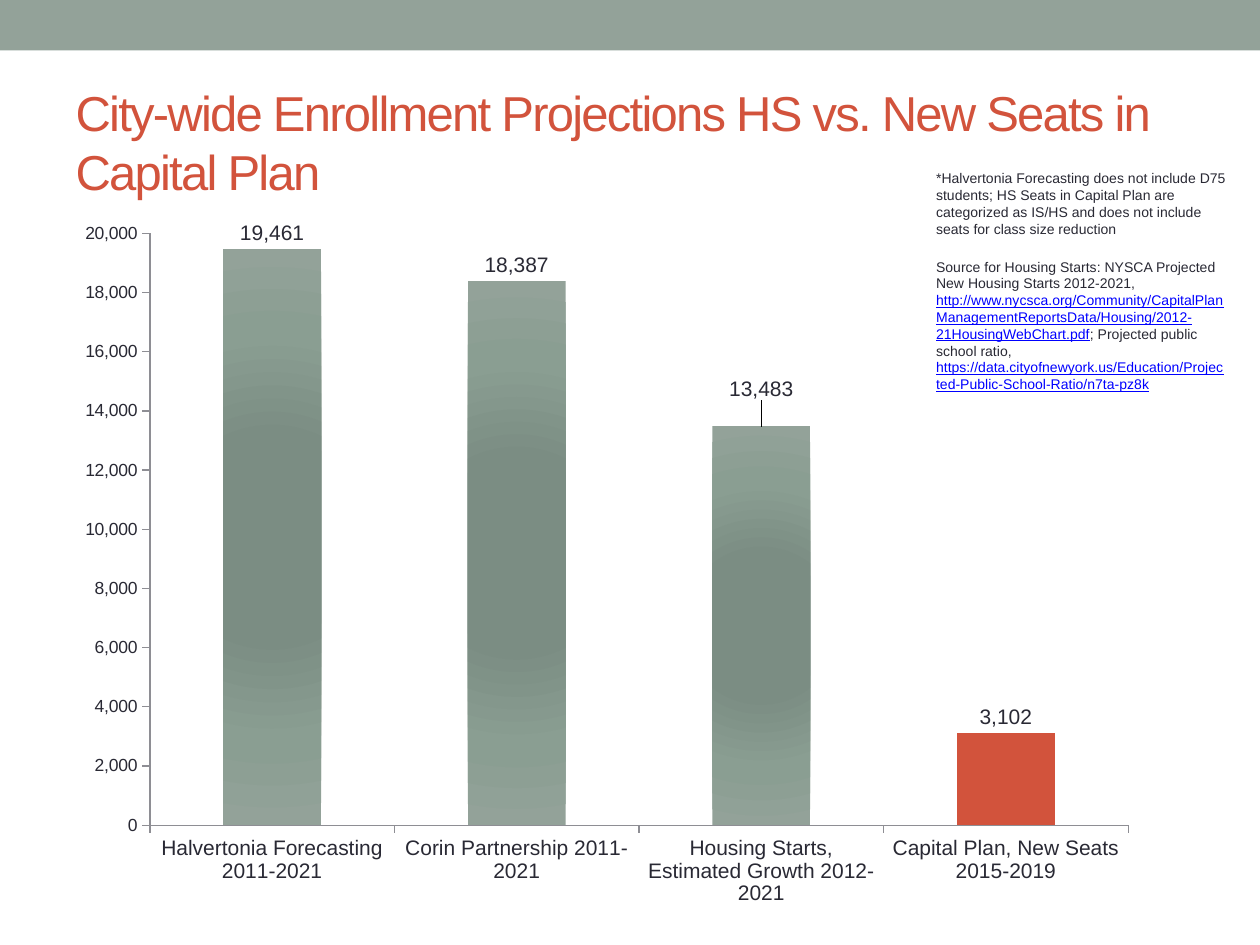
from dataclasses import dataclass

from lxml import etree
from pptx import Presentation
from pptx.chart.data import CategoryChartData
from pptx.dml.color import RGBColor
from pptx.enum.chart import XL_CHART_TYPE, XL_LABEL_POSITION, XL_TICK_MARK
from pptx.enum.shapes import MSO_SHAPE
from pptx.enum.text import MSO_ANCHOR, PP_ALIGN
from pptx.oxml import parse_xml
from pptx.oxml.ns import nsdecls, qn
from pptx.util import Pt

COLUMN = XL_CHART_TYPE.COLUMN_CLUSTERED
OUTSIDE_END = XL_LABEL_POSITION.OUTSIDE_END
TICK_OUT, TICK_NONE = XL_TICK_MARK.OUTSIDE, XL_TICK_MARK.NONE
RECTANGLE = MSO_SHAPE.RECTANGLE
MIDDLE, TOP = MSO_ANCHOR.MIDDLE, MSO_ANCHOR.TOP
LEFT = PP_ALIGN.LEFT
TITLE_ONLY = 5


@dataclass(frozen=True)
class Theme:
    font: str = "Arial"
    ink: str = "292934"
    sage: str = "93A299"
    accent: str = "D2533C"
    link: str = "0000FF"
    axis: str = "8E8E94"
    title_size: float = 28
    label_size: float = 12
    axis_size: float = 10
    note_size: float = 8
    gradient: tuple = ((0, "7B8E82"), (34, "7B8D83"), (70, "8A9E92"), (100, "93A299"))


@dataclass(frozen=True)
class Box:
    left: float
    top: float
    width: float
    height: float

    def lengths(self) -> tuple:
        return Pt(self.left), Pt(self.top), Pt(self.width), Pt(self.height)


@dataclass(frozen=True)
class Bar:
    category: str
    value: int
    highlighted: bool = False
    label_shift: float = 0


@dataclass(frozen=True)
class Piece:
    text: str
    is_link: bool = False


@dataclass(frozen=True)
class Note:
    box: Box
    pieces: tuple


THEME = Theme()
BAND = Box(0, 0, 720, 28.8)
TITLE = Box(36, 42, 648, 77.5)
CHART = Box(36, 120, 620.5, 406)
PLOT = {"x": 0.08, "y": 0.033, "w": 0.901, "h": 0.833}

BARS = (
    Bar("Halvertonia Forecasting 2011-2021", 19461),
    Bar("Corin Partnership 2011-2021", 18387),
    Bar("Housing Starts, Estimated Growth 2012-2021", 13483, label_shift=-0.03),
    Bar("Capital Plan, New Seats 2015-2019", 3102, highlighted=True),
)
NOTES = (
    Note(Box(527.8, 93.6, 180.7, 46), (
        Piece("*Halvertonia Forecasting does not include D75 students; HS Seats in Capital "
              "Plan are categorized as IS/HS and does not include seats for class size reduction"),
    )),
    Note(Box(527.8, 144, 180.7, 94.3), (
        Piece("Source for Housing Starts: NYSCA Projected New Housing Starts 2012-2021, "),
        Piece("http://www.nycsca.org/Community/CapitalPlanManagementReportsData/Housing/"
              "2012-21HousingWebChart.pdf", True),
        Piece("; Projected public school ratio, "),
        Piece("https://data.cityofnewyork.us/Education/Projected-Public-School-Ratio/n7ta-pz8k",
              True),
    )),
)


def style_font(font, size: float, color: str) -> None:
    font.name, font.size, font.bold = THEME.font, Pt(size), False
    font.color.rgb = RGBColor.from_string(color)


def add_band(slide) -> None:
    band = slide.shapes.add_shape(RECTANGLE, *BAND.lengths())
    band.shadow.inherit = False
    band.fill.solid()
    band.fill.fore_color.rgb = RGBColor.from_string(THEME.sage)
    band.line.fill.background()


def set_title(slide, text: str) -> None:
    title = slide.shapes.title
    title.left, title.top, title.width, title.height = TITLE.lengths()
    frame = title.text_frame
    frame.word_wrap, frame.vertical_anchor = True, MIDDLE
    paragraph = frame.paragraphs[0]
    paragraph.alignment = LEFT
    run = paragraph.add_run()
    run.text = text
    style_font(run.font, THEME.title_size, THEME.accent)
    run.font._element.set("spc", "-100")


def add_note(slide, note: Note) -> None:
    frame = slide.shapes.add_textbox(*note.box.lengths()).text_frame
    frame.word_wrap, frame.vertical_anchor = True, TOP
    paragraph = frame.paragraphs[0]
    for piece in note.pieces:
        run = paragraph.add_run()
        run.text = piece.text
        style_font(run.font, THEME.note_size, THEME.link if piece.is_link else THEME.ink)
        run.font.underline = piece.is_link


def manual_layout(values: dict, inner: bool = False):
    """Layout element with positions as fractions of the chart."""
    layout = parse_xml(f"<c:layout {nsdecls('c')}><c:manualLayout/></c:layout>")
    settings = dict(values)
    if inner:
        settings = {"layoutTarget": "inner", "xMode": "edge", "yMode": "edge", **settings}
    for name, value in settings.items():
        etree.SubElement(layout[0], qn(f"c:{name}")).set("val", str(value))
    return layout


def fill_radial(point) -> None:
    """Circular gradient, which needs XML."""
    stops = "".join(f'<a:gs pos="{position * 1000}"><a:srgbClr val="{color}"/></a:gs>'
                    for position, color in THEME.gradient)
    point.format.fill.solid()
    properties = point.format.fill._xPr
    properties.replace(properties.find(qn("a:solidFill")), parse_xml(
        f'<a:gradFill {nsdecls("a")} rotWithShape="1"><a:gsLst>{stops}</a:gsLst>'
        '<a:path path="circle"><a:fillToRect l="50000" t="50000" r="50000" b="50000"/></a:path>'
        "</a:gradFill>"))


def style_axis(axis, size: float) -> None:
    axis.has_major_gridlines = False
    axis.major_tick_mark, axis.minor_tick_mark = TICK_OUT, TICK_NONE
    axis.format.line.color.rgb = RGBColor.from_string(THEME.axis)
    axis.format.line.width = Pt(0.75)
    style_font(axis.tick_labels.font, size, THEME.ink)


def add_chart(slide) -> None:
    data = CategoryChartData(number_format="#,##0")
    data.categories = [bar.category for bar in BARS]
    data.add_series("Series 1", [bar.value for bar in BARS])
    chart = slide.shapes.add_chart(COLUMN, *CHART.lengths(), data).chart
    chart.has_legend = chart.has_title = False
    style_font(chart.font, THEME.axis_size, THEME.ink)

    # Axes
    style_axis(chart.category_axis, THEME.label_size)
    style_axis(chart.value_axis, THEME.axis_size)
    chart.value_axis.minimum_scale, chart.value_axis.maximum_scale = 0, 20000
    chart.value_axis.major_unit = 2000
    chart.value_axis.tick_labels.number_format = "#,##0"
    chart.value_axis.tick_labels.number_format_is_linked = False

    # Bars and value labels
    plot = chart.plots[0]
    plot.gap_width, plot.vary_by_categories = 150, False
    series = plot.series[0]
    series.format.fill.solid()
    series.format.fill.fore_color.rgb = RGBColor.from_string(THEME.sage)
    labels = series.data_labels
    labels.show_value, labels.position = True, OUTSIDE_END
    labels.number_format, labels.number_format_is_linked = "#,##0", False
    style_font(labels.font, THEME.label_size, THEME.ink)
    for index, bar in enumerate(BARS):
        point = series.points[index]
        if bar.highlighted:
            point.format.fill.solid()
            point.format.fill.fore_color.rgb = RGBColor.from_string(THEME.accent)
        else:
            fill_radial(point)
        if bar.label_shift:
            point.data_label.position = OUTSIDE_END
            style_font(point.data_label.font, THEME.label_size, THEME.ink)
            label = series._element.find(".//" + qn("c:dLbl"))
            label.insert(1, manual_layout({"x": 0, "y": bar.label_shift}))

    # Plot area position
    area = chart._chartSpace.find(".//" + qn("c:plotArea"))
    for old_layout in area.findall(qn("c:layout")):
        area.remove(old_layout)
    area.insert(0, manual_layout(PLOT, inner=True))


def main() -> None:
    presentation = Presentation()
    presentation.slide_width, presentation.slide_height = Pt(720), Pt(540)
    slide = presentation.slides.add_slide(presentation.slide_layouts[TITLE_ONLY])
    add_band(slide)
    set_title(slide, "City-wide Enrollment Projections HS vs. New Seats in Capital Plan")
    add_chart(slide)
    for note in NOTES:
        add_note(slide, note)
    presentation.save("out.pptx")


if __name__ == "__main__":
    main()
